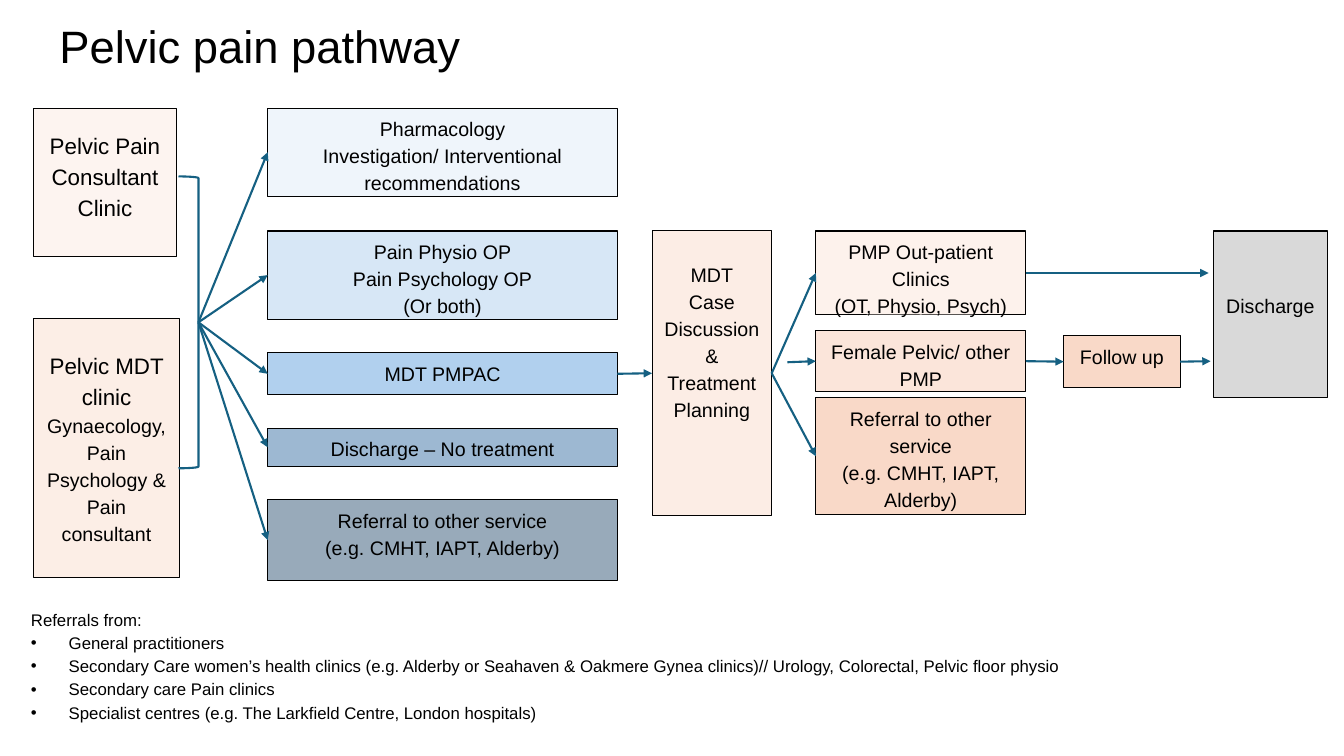
from pptx import Presentation
from pptx.dml.color import RGBColor
from pptx.enum.shapes import MSO_CONNECTOR, MSO_SHAPE
from pptx.enum.text import MSO_ANCHOR as ANCHOR, MSO_AUTO_SIZE as AUTO_SIZE, PP_ALIGN as ALIGN
from pptx.oxml.ns import qn
from pptx.util import Emu, Pt
from lxml.etree import SubElement

PX = 9525  # EMU in one px: the slide is 1280 by 720 px
FONT = "Arial"
TOP, LEFT, BOTTOM, RIGHT = range(4)  # sides of a rectangle

BLACK = RGBColor(0x00, 0x00, 0x00)
GREY = RGBColor(0xD9, 0xD9, 0xD9)
TEAL = RGBColor(0x15, 0x60, 0x82)
PEACH_1 = RGBColor(0xFB, 0xE3, 0xD6)
PEACH_2 = RGBColor(0xF6, 0xC6, 0xAD)
PEACH_3 = RGBColor(0xF2, 0xAA, 0x84)
BLUE_1 = RGBColor(0xDC, 0xEA, 0xF7)
BLUE_2 = RGBColor(0xA6, 0xCA, 0xEC)
BLUE_3 = RGBColor(0x4E, 0x95, 0xD9)
BLUE_4 = RGBColor(0x21, 0x5F, 0x9A)
BLUE_5 = RGBColor(0x16, 0x3E, 0x64)

TREATMENT_X, TREATMENT_WIDTH = 255, 333
OUTCOME_X, OUTCOME_WIDTH = 777, 200
OTHER_SERVICE = [("Referral to other service", 14), ("(e.g. CMHT, IAPT, Alderby)", 14)]

# name: (left, top, width, height), fill, opacity in %, top inset, [(text, size)]
BOXES = {
    "consultant": ((32, 103, 136, 141), PEACH_1, 36, 19,
                   [("Pelvic Pain Consultant Clinic", 16)]),
    "mdt clinic": ((32, 303, 139, 247), PEACH_1, 60, 29,
                   [("Pelvic MDT clinic", 16),
                    ("Gynaecology, Pain Psychology &", 14),
                    ("Pain consultant", 14)]),
    "pharmacology": ((TREATMENT_X, 103, TREATMENT_WIDTH, 84), BLUE_1, 44, 5,
                     [("Pharmacology", 14),
                      ("Investigation/ Interventional recommendations", 14)]),
    "physio": ((TREATMENT_X, 220, TREATMENT_WIDTH, 84), BLUE_2, 44, 5,
               [("Pain Physio OP", 14), ("Pain Psychology OP", 14), ("(Or both)", 14)]),
    "pmpac": ((TREATMENT_X, 336, TREATMENT_WIDTH, 40), BLUE_3, 44, 5,
              [("MDT PMPAC", 14)]),
    "no treatment": ((TREATMENT_X, 408, TREATMENT_WIDTH, 36), BLUE_4, 44, 5,
                     [("Discharge – No treatment", 14)]),
    "referral": ((TREATMENT_X, 476, TREATMENT_WIDTH, 77), BLUE_5, 44, 5, OTHER_SERVICE),
    "planning": ((621, 220, 114, 271), PEACH_1, 61, 27,
                 [("MDT", 14), ("Case", 14), ("Discussion", 14), ("&", 14),
                  ("Treatment Planning", 14)]),
    "outpatient": ((OUTCOME_X, 220, OUTCOME_WIDTH, 80), PEACH_1, 44, 5,
                   [("PMP Out-patient Clinics", 14), ("(OT, Physio, Psych)", 14)]),
    "pmp": ((OUTCOME_X, 315, OUTCOME_WIDTH, 58), PEACH_2, 44, 5,
            [("Female Pelvic/ other PMP", 14)]),
    "other service": ((OUTCOME_X, 379, OUTCOME_WIDTH, 111), PEACH_3, 44, 5, OTHER_SERVICE),
    "follow up": ((1013, 320, 111, 49), PEACH_3, 44, 5, [("Follow up", 14)]),
    "discharge": ((1156, 220, 108, 159), GREY, 100, 57, [("Discharge", 14)]),
}

BRACKET = (170, 168, 19, 278)
BRACKET_TIP = (189, 307)

# Each end is a point, or a box and one of its sides
ARROWS = [(BRACKET_TIP, (name, LEFT))
          for name in ("pharmacology", "physio", "pmpac", "no treatment", "referral")] + [
    (("pmpac", RIGHT), ("planning", LEFT)),
    (("planning", RIGHT), ("outpatient", LEFT)),
    ((750, 345), ("pmp", LEFT)),
    (("planning", RIGHT), ("other service", LEFT)),
    (("pmp", RIGHT), ("follow up", LEFT)),
    (("outpatient", RIGHT), (1151, 260)),
    (("follow up", RIGHT), (1153, 344)),
]

REFERRERS = [
    "General practitioners",
    "Secondary Care women’s health clinics (e.g. Alderby or Seahaven & Oakmere Gynea "
    "clinics)// Urology, Colorectal, Pelvic floor physio",
    "Secondary care Pain clinics",
    "Specialist centres (e.g. The Larkfield Centre, London hospitals)",
]


def px(*lengths):
    return [Emu(length * PX) for length in lengths]


def set_all(target, values):
    for name, value in values.items():
        setattr(target, name, value)


def write(frame, lines, align=ALIGN.LEFT, spacing=1.15):
    """Write (text, size) lines as the paragraphs of a text frame."""
    for number, (text, size) in enumerate(lines):
        paragraph = frame.paragraphs[0] if number == 0 else frame.add_paragraph()
        set_all(paragraph, {"alignment": align, "line_spacing": spacing,
                            "space_before": Pt(0), "space_after": Pt(0)})
        run = paragraph.add_run()
        run.text = text
        set_all(run.font, {"name": FONT, "size": Pt(size)})
        run.font.color.rgb = BLACK


def add_title(slide, text):
    title = slide.shapes.title
    set_all(title, dict(zip(("left", "top", "width", "height"), px(47, 21, 1104, 50))))
    set_all(title.text_frame, {"vertical_anchor": ANCHOR.MIDDLE, "auto_size": AUTO_SIZE.NONE})
    write(title.text_frame, [(text, 32.4)], spacing=0.9)


def add_box(slide, place, color, opacity, inset, lines):
    shape = slide.shapes.add_shape(MSO_SHAPE.RECTANGLE, *px(*place))
    shape.shadow.inherit = False
    shape.fill.solid()
    shape.fill.fore_color.rgb = color
    if opacity < 100:
        fill_color = shape.element.spPr.find(qn("a:solidFill"))[0]
        SubElement(fill_color, qn("a:alpha"), val=str(opacity * 1000))
    shape.line.color.rgb = BLACK
    shape.line.width = Pt(0.75)
    set_all(shape.text_frame, {"word_wrap": True, "vertical_anchor": ANCHOR.TOP,
                               "margin_top": Emu(inset * PX)})
    write(shape.text_frame, lines, ALIGN.CENTER)
    return shape


def add_bracket(slide):
    shape = slide.shapes.add_shape(MSO_SHAPE.RIGHT_BRACKET, *px(*BRACKET))
    shape.shadow.inherit = False
    shape.fill.background()
    shape.line.color.rgb = TEAL
    shape.line.width = Pt(1.5)


def add_arrow(slide, boxes, start, end):
    points = [(0, 0) if isinstance(place[0], str) else place for place in (start, end)]
    arrow = slide.shapes.add_connector(MSO_CONNECTOR.STRAIGHT, *px(*points[0], *points[1]))
    for place, join in ((start, arrow.begin_connect), (end, arrow.end_connect)):
        if isinstance(place[0], str):
            join(boxes[place[0]], place[1])
    arrow.line.color.rgb = TEAL
    arrow.line.width = Pt(1.5)
    properties = arrow.element.spPr
    SubElement(properties.find(qn("a:ln")), qn("a:tailEnd"), type="triangle")
    SubElement(properties, qn("a:effectLst"))


def add_referrers(slide):
    frame = slide.shapes.add_textbox(*px(20, 573, 1133, 119)).text_frame
    frame.word_wrap = True
    write(frame, [(text, 12) for text in ["Referrals from:"] + REFERRERS])
    for paragraph in frame.paragraphs[1:]:
        properties = paragraph._p.get_or_add_pPr()
        properties.set("marL", str(36 * PX))
        properties.set("indent", str(-36 * PX))
        SubElement(properties, qn("a:buFont"), typeface=FONT)
        SubElement(properties, qn("a:buChar"), char="•")


def main():
    presentation = Presentation()
    presentation.slide_width, presentation.slide_height = px(1280, 720)
    slide = presentation.slides.add_slide(presentation.slide_layouts[5])

    add_title(slide, "Pelvic pain pathway")
    # Pathway
    boxes = {name: add_box(slide, *values) for name, values in BOXES.items()}
    add_bracket(slide)
    for start, end in ARROWS:
        add_arrow(slide, boxes, start, end)
    # Sources of referrals
    add_referrers(slide)

    presentation.save("out.pptx")


if __name__ == "__main__":
    main()
